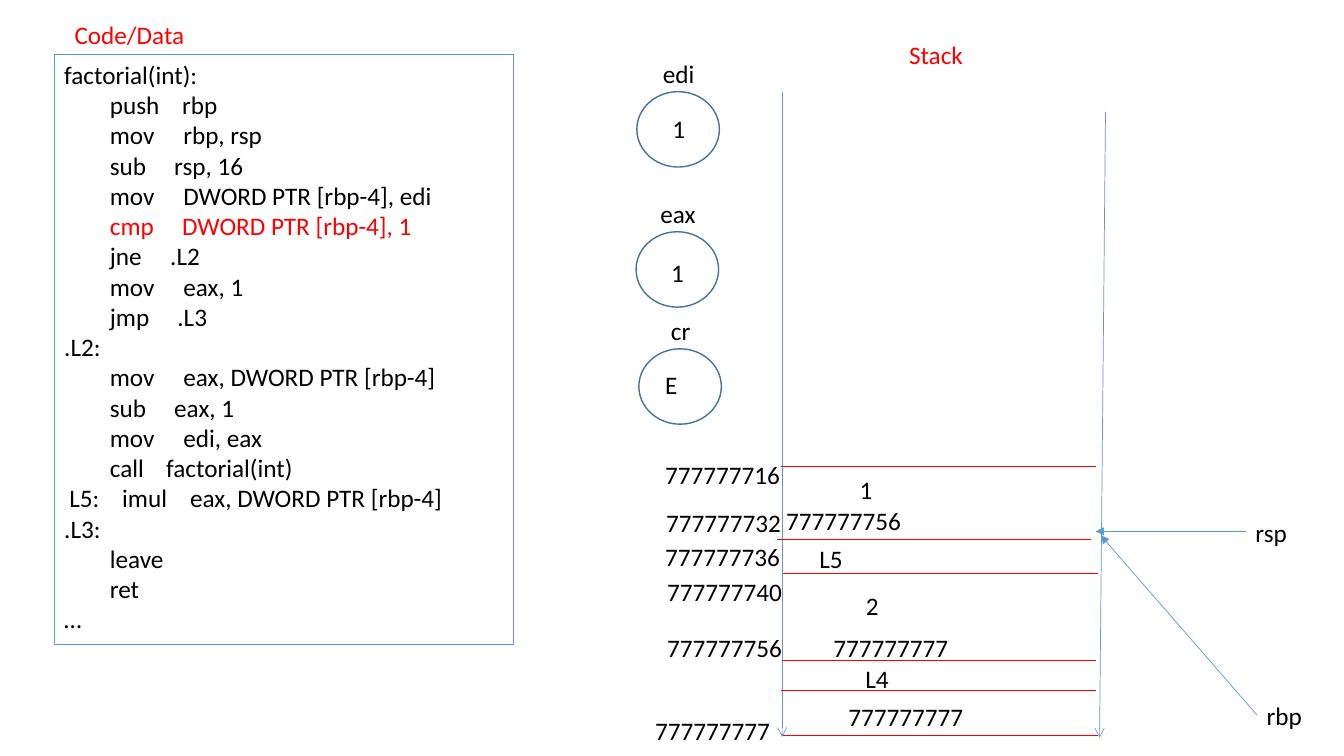
import pptx
import pptx.dml.color
import pptx.enum.shapes
import pptx.enum.text
import pptx.oxml
import pptx.oxml.ns
import pptx.util
from pptx.util import Cm

COLORS = {"text": "000000", "accent": "FF0000", "line": "5B9BD5", "circle": "43739E"}
NAMESPACE = pptx.oxml.ns.nsdecls("a")
TEXT_HEIGHT = 1.02
FRAME_LENGTH = 7.92

# Tab stops in cm: instruction column, then operand column by instruction
INDENT = 1.15
OPERAND_STOPS = {"push": 2.97, "mov": 3.0, "sub": 2.77, "cmp": 2.97, "jne": 2.67,
                 "jmp": 2.85, "call": 2.57, "imul": 3.17}
CURRENT_INSTRUCTION = "cmp"
CODE = [
    "factorial(int):",
    "\tpush\trbp",
    "\tmov\trbp, rsp",
    "\tsub\trsp, 16",
    "\tmov\tDWORD PTR [rbp-4], edi",
    "\tcmp\tDWORD PTR [rbp-4], 1",
    "\tjne\t.L2",
    "\tmov\teax, 1",
    "\tjmp\t.L3",
    ".L2:",
    "\tmov\teax, DWORD PTR [rbp-4]",
    "\tsub\teax, 1",
    "\tmov\tedi, eax",
    "\tcall\tfactorial(int)",
    "\tL5:\timul\teax, DWORD PTR [rbp-4]",
    ".L3:",
    "\tleave",
    "\tret",
    "…",
]

# Name, circle left and top
REGISTERS = [("edi", 16.05, 2.31), ("eax", 16.03, 5.84), ("cr", 16.1, 8.79)]

# Text, left, top
ADDRESSES = [
    ("777777716", 16.51, 11.46), ("777777732", 16.54, 12.67),
    ("777777736", 16.51, 13.51), ("777777740", 16.56, 14.4),
    ("777777756", 16.56, 15.82), ("777777777", 16.26, 17.91),
]
STACK_VALUES = [
    ("777777756", 19.56, 12.62), ("L5", 20.4, 13.56), ("777777777", 20.75, 15.82),
    ("L4", 21.56, 16.59), ("777777777", 21.13, 17.55),
]
# Single digits, centred in narrow boxes: registers first, then stack
DIGITS = [("1", 16.51, 2.74), ("1", 16.48, 6.35), ("1", 21.23, 11.84), ("2", 21.39, 14.76)]

# Left and height of the stack dividers
DIVIDERS = [(19.69, 11.76), (19.58, 13.59), (19.74, 14.45),
            (19.71, 16.64), (19.69, 17.4), (19.74, 18.52)]


def rgb(name):
    return pptx.dml.color.RGBColor.from_string(COLORS[name])


def write_text(paragraph, text, color="text", centered=False):
    alignment = pptx.enum.text.PP_ALIGN
    paragraph.alignment = alignment.CENTER if centered else alignment.LEFT
    run = paragraph.add_run()
    run.text = text
    run.font.name = "Calibri"
    run.font.size = pptx.util.Pt(18)
    run.font.color.rgb = rgb(color)


def add_label(slide, text, left, top, width=4.04, **text_format):
    box = slide.shapes.add_textbox(Cm(left), Cm(top), Cm(width), Cm(TEXT_HEIGHT))
    box.text_frame.word_wrap = True
    write_text(box.text_frame.paragraphs[0], text, **text_format)


def add_outline(slide, kind, left, top, width, height, color, weight):
    shape = slide.shapes.add_shape(kind, Cm(left), Cm(top), Cm(width), Cm(height))
    shape.shadow.inherit = False
    shape.fill.background()
    shape.line.color.rgb = rgb(color)
    shape.line.width = pptx.util.Pt(weight)
    return shape


def add_line(slide, start, end, color="line", head=None):
    connector = slide.shapes.add_connector(
        pptx.enum.shapes.MSO_CONNECTOR.STRAIGHT, *map(Cm, start + end))
    connector.line.color.rgb = rgb(color)
    connector.line.width = pptx.util.Pt(0.5)
    properties = connector.element.spPr
    if head:
        properties.find(pptx.oxml.ns.qn("a:ln")).append(
            pptx.oxml.parse_xml(f'<a:tailEnd {NAMESPACE} type="{head}"/>'))
    properties.append(pptx.oxml.parse_xml(f"<a:effectLst {NAMESPACE}/>"))


def set_tab_stops(paragraph, stops):
    tabs = "".join(f'<a:tab pos="{Cm(stop)}" algn="l"/>' for stop in stops)
    paragraph._p.get_or_add_pPr().append(
        pptx.oxml.parse_xml(f"<a:tabLst {NAMESPACE}>{tabs}</a:tabLst>"))


def add_code(slide):
    box = add_outline(slide, pptx.enum.shapes.MSO_SHAPE.RECTANGLE,
                      1.37, 1.37, 11.58, 14.88, "line", 0.75)
    frame = box.text_frame
    frame.word_wrap = True
    frame.vertical_anchor = pptx.enum.text.MSO_ANCHOR.TOP
    for index, line in enumerate(CODE):
        paragraph = frame.add_paragraph() if index else frame.paragraphs[0]
        words = line.split("\t")
        is_current = CURRENT_INSTRUCTION in words
        write_text(paragraph, line, color="accent" if is_current else "text")
        if len(words) > 1:
            stops = [0.13, 1.46] if "L5:" in words else [INDENT]
            stops += [OPERAND_STOPS[word] for word in words if word in OPERAND_STOPS]
            set_tab_stops(paragraph, stops)


def add_register(slide, name, left, top):
    add_outline(slide, pptx.enum.shapes.MSO_SHAPE.OVAL, left, top, 2.08, 1.9, "circle", 1)
    add_label(slide, name, left - 0.15, top - 0.97, width=2.41, centered=True)


def add_pointer(slide, name, left, top, start, end):
    add_label(slide, name, left, top, width=1.78)
    add_line(slide, start, end, head="triangle")


def main():
    presentation = pptx.Presentation()
    presentation.slide_width, presentation.slide_height = Cm(33.87), Cm(19.05)
    slide = presentation.slides.add_slide(presentation.slide_layouts[6])

    # Headings and code
    add_code(slide)
    add_label(slide, "Code/Data", 1.63, 0.36, width=6.02, color="accent")
    add_label(slide, "Stack", 22.66, 0.86, width=6.02, color="accent")

    # Registers
    for register in REGISTERS:
        add_register(slide, *register)
    add_label(slide, "E", 16.51, 9.19, width=1.35)

    # Stack walls and dividers
    add_line(slide, (19.71, 2.31), (19.71, 18.57), head="arrow")
    add_line(slide, (27.86, 2.82), (27.71, 18.59), head="arrow")
    for left, height in DIVIDERS:
        add_line(slide, (left, height), (left + FRAME_LENGTH, height), color="accent")

    # Addresses and values
    for label in ADDRESSES + STACK_VALUES:
        add_label(slide, *label)
    for digit in DIGITS:
        add_label(slide, *digit, width=1.19, centered=True)

    # Stack pointers
    add_pointer(slide, "rsp", 31.39, 12.9, (31.39, 13.39), (27.61, 13.39))
    add_pointer(slide, "rbp", 31.67, 17.53, (31.67, 18.01), (27.74, 13.49))

    presentation.save("out.pptx")


if __name__ == "__main__":
    main()
